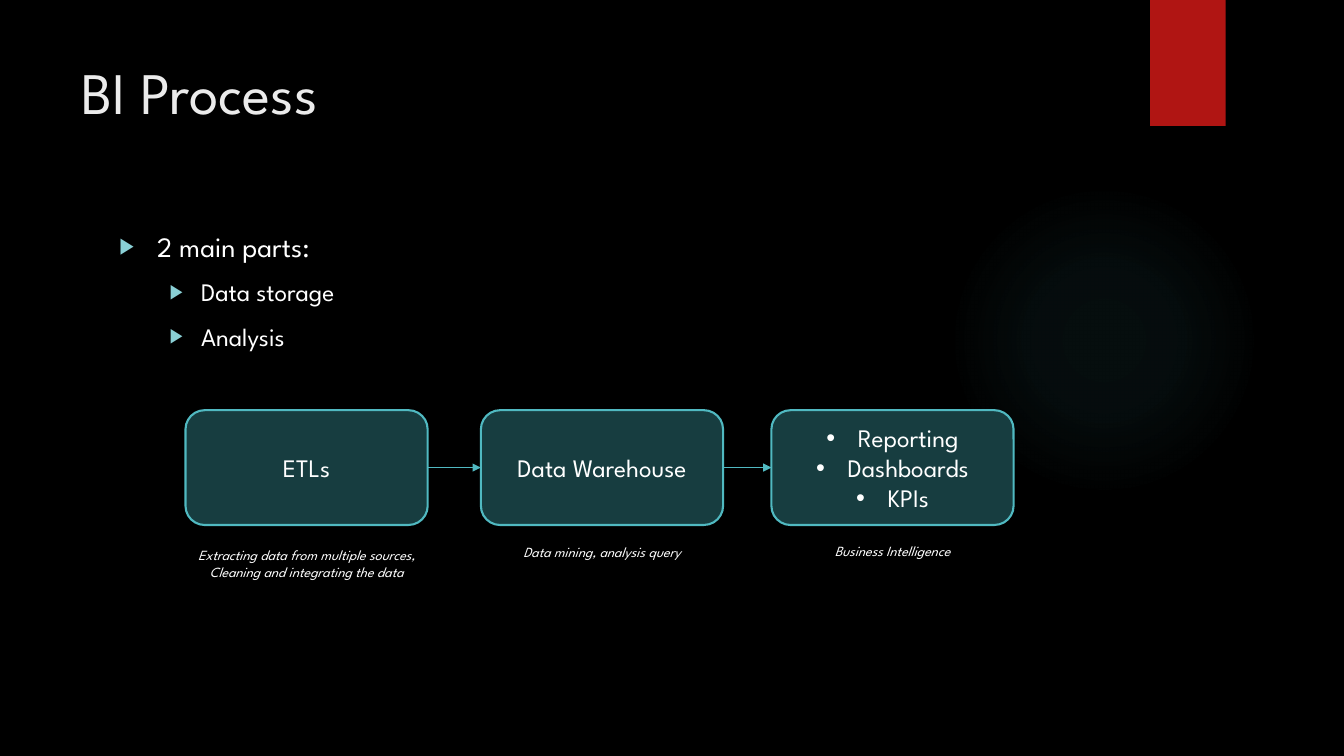
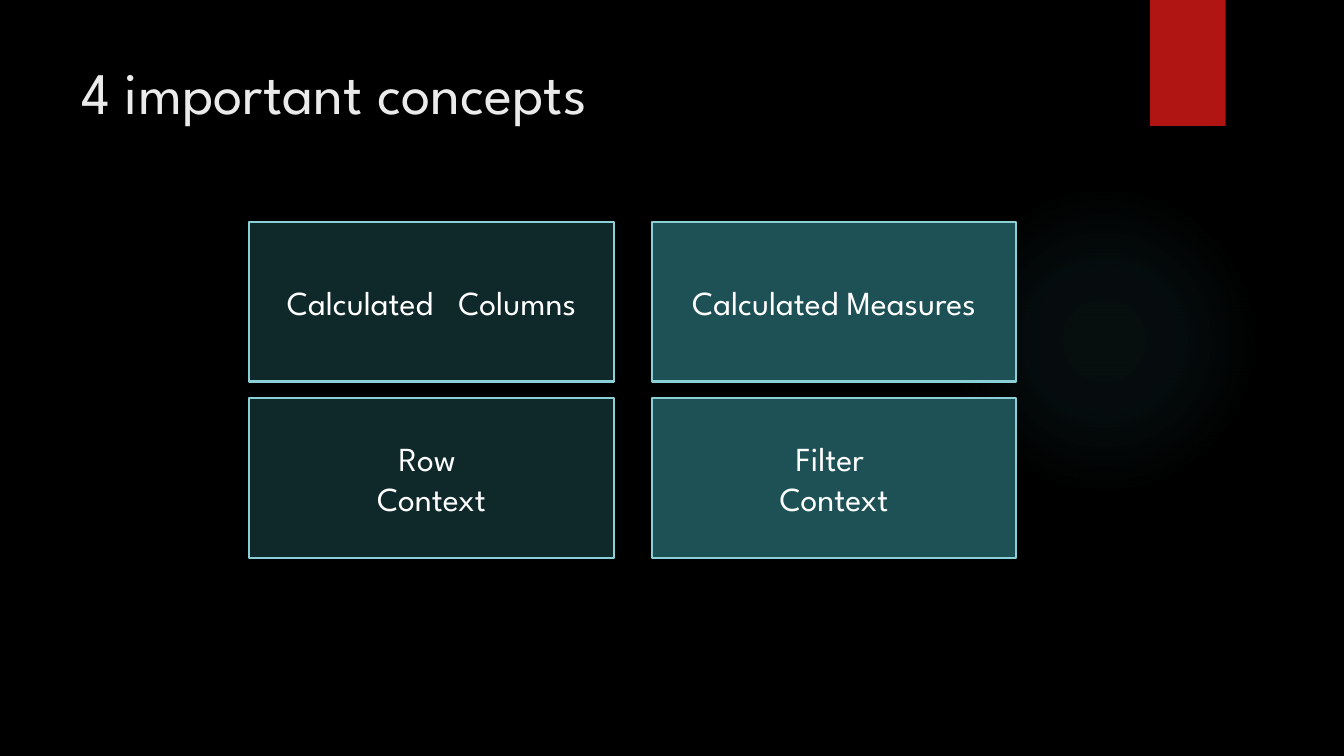
from lxml import etree
from pptx import Presentation
from pptx import util as u
from pptx.dml.color import RGBColor
from pptx.enum import shapes, text
from pptx.oxml.ns import qn

FONT = "League Spartan"
WHITE, TITLE, BLACK, RED = "FFFFFF", "EBEBEB", "000000", "B01513"
TEAL, AQUA, STAGE_FILL = "50B9C1", "8AD0D6", "173D40"
COLUMN_FILLS = ["0F282A", "1E5155"]

GLOW = (677.5, 132, 222, 222)
GLOW_STOPS = [(0, 7), (36, 6), (69, 0)]
RIBBON = (821.5, 0, 54, 90)
TITLE_BOX = (51, 36, 741, 110)
BODY_BOX = (78, 160, 704, 330)

PARTS = [("2 main parts:", 0), ("Data storage", 1), ("Analysis", 1)]
LEVELS = [dict(size=20, margin=27, hang=27), dict(size=18, margin=58.5, hang=22.5)]

STAGE_TOP, STAGE_W, STAGE_H = 293, 173, 82
CAPTION_W = 200
STAGES = [
    (132.5, ["ETLs"], 387,
     ["Extracting data from multiple sources,", "Cleaning and integrating the data"]),
    (343.5, ["Data Warehouse"], 384.5, ["Data mining, analysis query"]),
    (551, ["Reporting", "Dashboards", "KPIs"], 384, ["Business Intelligence"]),
]

CONCEPTS = [
    [["Calculated Columns"], ["Calculated Measures"]],
    [["Row ", "Context"], ["Filter ", "Context"]],
]
WIDE_GAP = {"Calculated Columns": 12}
GRID_LEFT, GRID_TOP, CELL_W, CELL_H = 178, 158.5, 260.5, 114
GAP_X, GAP_Y = 27, 12


def rgb(value):
    return RGBColor.from_string(value)


def pts(*values):
    return [u.Pt(v) for v in values]


def child(parent, tag, **attrs):
    return etree.SubElement(parent, qn(tag), {k: str(v) for k, v in attrs.items()})


def add_bullet(p, char, margin, hang, color=None, percent=100):
    pPr = p._p.get_or_add_pPr()
    pPr.set("marL", str(u.Pt(margin)))
    pPr.set("indent", str(-u.Pt(hang)))
    if color:
        child(child(pPr, "a:buClr"), "a:srgbClr", val=color)
    child(pPr, "a:buSzPct", val=percent * 1000)
    child(pPr, "a:buFont", typeface="Arial")
    child(pPr, "a:buChar", char=char)


def write(p, content, size, color=WHITE, italic=None, align=None, gap=0):
    p.alignment = align
    pieces = content.partition(" ") if gap else [content]
    for piece in pieces:
        r = p.add_run()
        r.text = piece
        r.font.name, r.font.size, r.font.italic = FONT, u.Pt(size), italic
        r.font.color.rgb = rgb(color)
        if gap and piece == " ":
            r._r.get_or_add_rPr().set("spc", str(gap * 100))


def paragraphs(tf, lines):
    for i, line in enumerate(lines):
        yield (tf.paragraphs[0] if i == 0 else tf.add_paragraph()), line


def add_box(s, kind, box, fill, line=None, lines=(), size=18, bullets=False):
    sp = s.shapes.add_shape(kind, *pts(*box))
    sp.shadow.inherit = False
    sp.fill.solid()
    sp.fill.fore_color.rgb = rgb(fill)
    if line:
        sp.line.color.rgb = rgb(line)
        sp.line.width = u.Pt(1.5)
    else:
        sp.line.fill.background()
    tf = sp.text_frame
    tf.word_wrap = True
    tf.vertical_anchor = text.MSO_ANCHOR.MIDDLE
    for p, content in paragraphs(tf, lines):
        if bullets:
            add_bullet(p, "•", 22.5, 22.5)
        write(p, content, size, align=text.PP_ALIGN.CENTER, gap=WIDE_GAP.get(content, 0))
    return sp


def add_glow(s):
    sp = add_box(s, shapes.MSO_SHAPE.OVAL, GLOW, TEAL)
    spPr = sp._element.spPr
    solid = spPr.find(qn("a:solidFill"))
    grad = etree.Element(qn("a:gradFill"), rotWithShape="1")
    stops = child(grad, "a:gsLst")
    for pos, alpha in GLOW_STOPS:
        color = child(child(stops, "a:gs", pos=pos * 1000), "a:srgbClr", val=TEAL)
        child(color, "a:alpha", val=alpha * 1000)
    center = child(grad, "a:path", path="circle")
    child(center, "a:fillToRect", l=50000, t=50000, r=50000, b=50000)
    spPr.replace(solid, grad)
    return sp


def decorate_master(prs, s):
    master = prs.slide_master
    master.background.fill.solid()
    master.background.fill.fore_color.rgb = rgb(BLACK)
    ribbon = add_box(s, shapes.MSO_SHAPE.RECTANGLE, RIBBON, RED)
    for sp in (ribbon, add_glow(s)):
        master.shapes._spTree.insert(2, sp._element)


def place(sp, box):
    sp.left, sp.top, sp.width, sp.height = pts(*box)
    tf = sp.text_frame
    tf.word_wrap = True
    tf.auto_size = text.MSO_AUTO_SIZE.NONE
    tf.vertical_anchor = text.MSO_ANCHOR.TOP
    return tf


def add_slide(prs, layout, title):
    s = prs.slides.add_slide(prs.slide_layouts.get_by_name(layout))
    tf = place(s.shapes.title, TITLE_BOX)
    write(tf.paragraphs[0], title, 42, TITLE, align=text.PP_ALIGN.LEFT)
    return s


def add_arrow(s, start, end):
    c = s.shapes.add_connector(shapes.MSO_CONNECTOR.STRAIGHT, 0, 0, 0, 0)
    c.begin_connect(start, 3)
    c.end_connect(end, 1)
    c.line.color.rgb = rgb(TEAL)
    c.line.width = u.Pt(0.75)
    child(c.line._get_or_add_ln(), "a:tailEnd", type="triangle")
    child(c._element.spPr, "a:effectLst")


def add_caption(s, center, top, lines):
    box = (center - CAPTION_W / 2, top, CAPTION_W, 7.2 + 12.2 * len(lines))
    tf = s.shapes.add_textbox(*pts(*box)).text_frame
    tf.word_wrap = False
    for p, content in paragraphs(tf, lines):
        write(p, content, 10, italic=True, align=text.PP_ALIGN.CENTER)


def fill_process(s):
    tf = place(s.placeholders[1], BODY_BOX)
    for p, (content, level) in paragraphs(tf, PARTS):
        style = LEVELS[level]
        p.level = level
        p.space_before = u.Pt(10 if level else 0)
        add_bullet(p, "▶", style["margin"], style["hang"], AQUA, 80)
        write(p, content, style["size"])
    boxes = []
    for left, lines, caption_top, caption in STAGES:
        box = (left, STAGE_TOP, STAGE_W, STAGE_H)
        boxes.append(add_box(s, shapes.MSO_SHAPE.ROUNDED_RECTANGLE, box, STAGE_FILL,
                             TEAL, lines, bullets=len(lines) > 1))
        add_caption(s, left + STAGE_W / 2, caption_top, caption)
    for start, end in zip(boxes, boxes[1:]):
        add_arrow(s, start, end)


def fill_concepts(s):
    for i, row in enumerate(CONCEPTS):
        for j, lines in enumerate(row):
            box = (GRID_LEFT + j * (CELL_W + GAP_X), GRID_TOP + i * (CELL_H + GAP_Y),
                   CELL_W, CELL_H)
            add_box(s, shapes.MSO_SHAPE.RECTANGLE, box, COLUMN_FILLS[j], AQUA, lines, 24)


def main():
    """Build the two slides and save them."""
    prs = Presentation()
    prs.slide_width, prs.slide_height = pts(960, 540)
    process = add_slide(prs, "Title and Content", "BI Process")
    decorate_master(prs, process)
    fill_process(process)
    fill_concepts(add_slide(prs, "Title Only", "4 important concepts"))
    prs.save("out.pptx")


if __name__ == "__main__":
    main()
